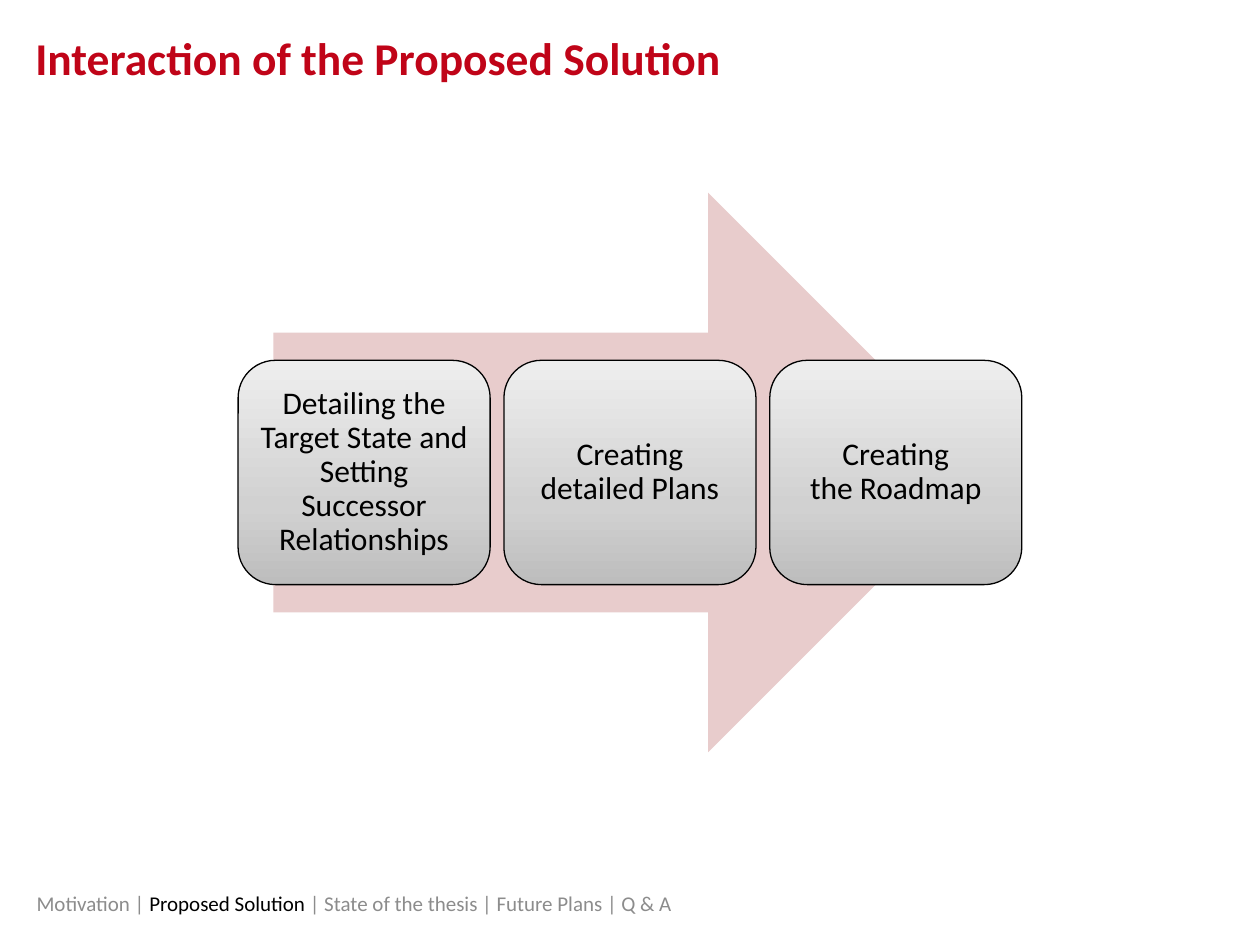
import pptx
import pptx.dml.color
import pptx.enum.shapes
import pptx.enum.text
import pptx.oxml.ns
import pptx.util
from lxml import etree

Inches = pptx.util.Inches
Pt = pptx.util.Pt
SHAPE = pptx.enum.shapes.MSO_SHAPE
ANCHOR = pptx.enum.text.MSO_ANCHOR
ALIGN = pptx.enum.text.PP_ALIGN
qn = pptx.oxml.ns.qn

FONT = "Calibri"
RED, GREY, BLACK, PINK = "C00418", "8C8C8C", "000000", "E8CCCC"
GRADIENT = [(0, "BDBDBD"), (35, "D1D1D1"), (100, "EEEEEE")]

TITLE = "Interaction of the Proposed Solution"
AGENDA = [
    ("Motivation | ", GREY),
    ("Proposed Solution ", BLACK),
    ("| State of the thesis | Future Plans | Q & A", GREY),
]
STEPS = [
    ["Detailing the Target State and Setting Successor Relationships"],
    ["Creating detailed Plans"],
    ["Creating", "the Roadmap"],
]
STEP_LEFT, STEP_TOP, STEP_W, STEP_H, STEP_PITCH = 1.89, 2.86, 2, 1.78, 2.11


def rgb(value):
    return pptx.dml.color.RGBColor.from_string(value)


def add_run(p, text, size, color, bold=False):
    r = p.add_run()
    r.text = text
    r.font.name = FONT
    r.font.size = Pt(size)
    r.font.bold = bold
    r.font.color.rgb = rgb(color)


def set_frame(tf, anchor, side, end, wrap=True):
    """Set anchor, wrapping and insets (side: left and right, end: top and bottom)."""
    tf.word_wrap = wrap
    tf.vertical_anchor = anchor
    tf.margin_left = tf.margin_right = Inches(side)
    tf.margin_top = tf.margin_bottom = Inches(end)


def add_text(s, box, runs, size, anchor, end=0, bold=False, wrap=True):
    tf = s.shapes.add_textbox(*map(Inches, box)).text_frame
    set_frame(tf, anchor, 0, end, wrap)
    for text, color in runs:
        add_run(tf.paragraphs[0], text, size, color, bold)


def add_shape(s, kind, box):
    sp = s.shapes.add_shape(kind, *map(Inches, box))
    sp.shadow.inherit = False
    return sp


def fill_gradient(sp, stops):
    """Fill from bottom to top with (percent, colour) stops."""
    sp.fill.gradient()
    sp.fill.gradient_angle = 90
    gs_list = next(sp._element.spPr.iter(qn("a:gsLst")))
    for gs in list(gs_list):
        gs_list.remove(gs)
    for percent, color in stops:
        gs = etree.SubElement(gs_list, qn("a:gs"), pos=str(percent * 1000))
        etree.SubElement(gs, qn("a:srgbClr"), val=color)


def add_step(s, index, lines):
    left = STEP_LEFT + index * STEP_PITCH
    sp = add_shape(s, SHAPE.ROUNDED_RECTANGLE, (left, STEP_TOP, STEP_W, STEP_H))
    fill_gradient(sp, GRADIENT)
    sp.line.color.rgb = rgb(BLACK)
    sp.line.width = Pt(0.75)
    set_frame(sp.text_frame, ANCHOR.MIDDLE, 0.07, 0.07)
    p = sp.text_frame.paragraphs[0]
    p.alignment = ALIGN.CENTER
    p.line_spacing = 0.9
    for i, line in enumerate(lines):
        if i:
            p.add_line_break()
        add_run(p, line, 18, BLACK)


def main():
    prs = pptx.Presentation()
    prs.slide_width, prs.slide_height = Inches(10), Inches(7.5)
    s = prs.slides.add_slide(prs.slide_layouts[6])

    add_text(s, (0.28, 0.24, 9.39, 0.59), [(TITLE, RED)], 26, ANCHOR.TOP, bold=True)
    add_text(s, (0.29, 7.05, 7.52, 0.23), AGENDA, 12, ANCHOR.MIDDLE, end=0.08, wrap=False)

    arrow = add_shape(s, SHAPE.RIGHT_ARROW, (2.17, 1.53, 5.67, 4.44))
    arrow.fill.solid()
    arrow.fill.fore_color.rgb = rgb(PINK)
    arrow.line.fill.background()

    for index, lines in enumerate(STEPS):
        add_step(s, index, lines)

    prs.save("out.pptx")


if __name__ == "__main__":
    main()
